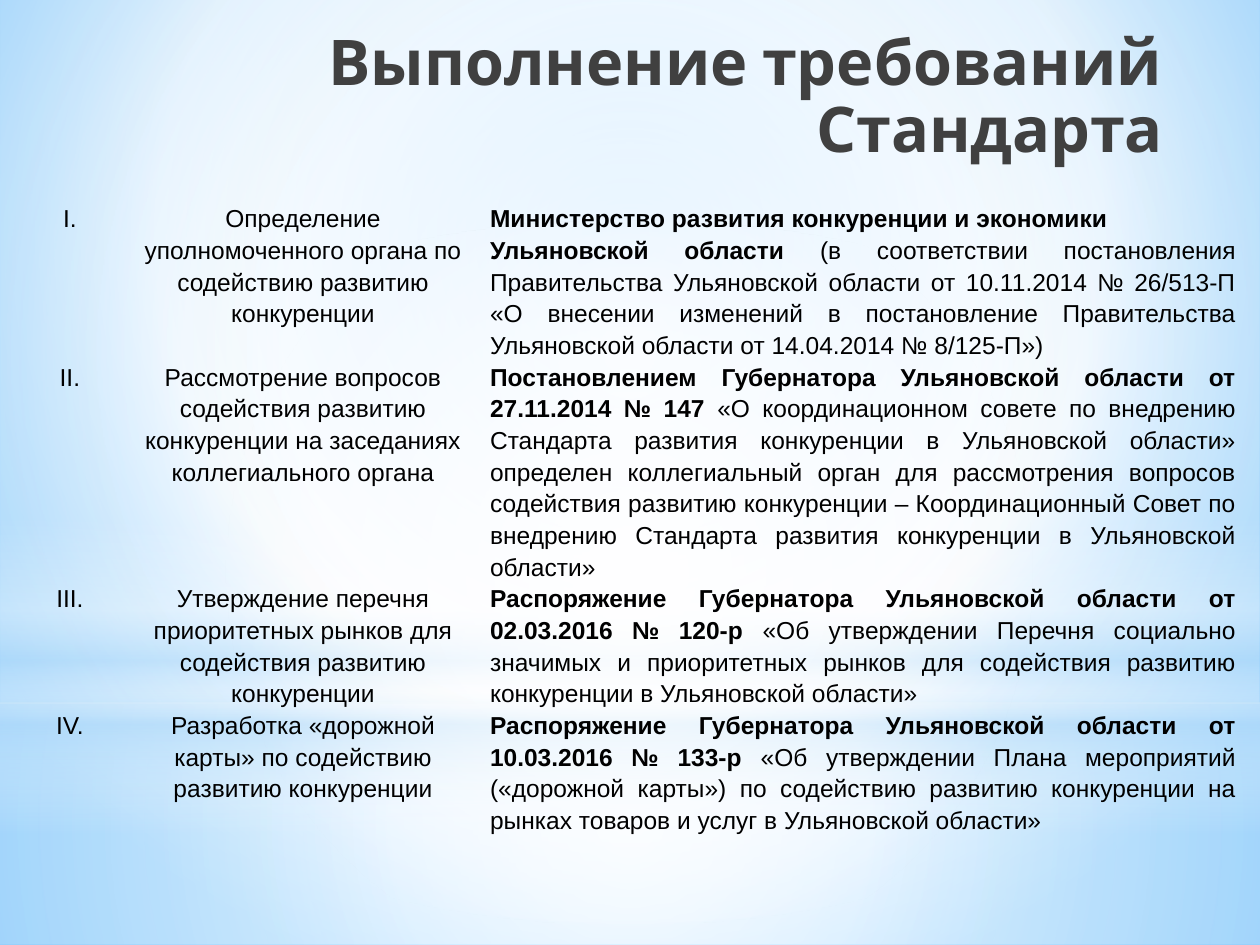
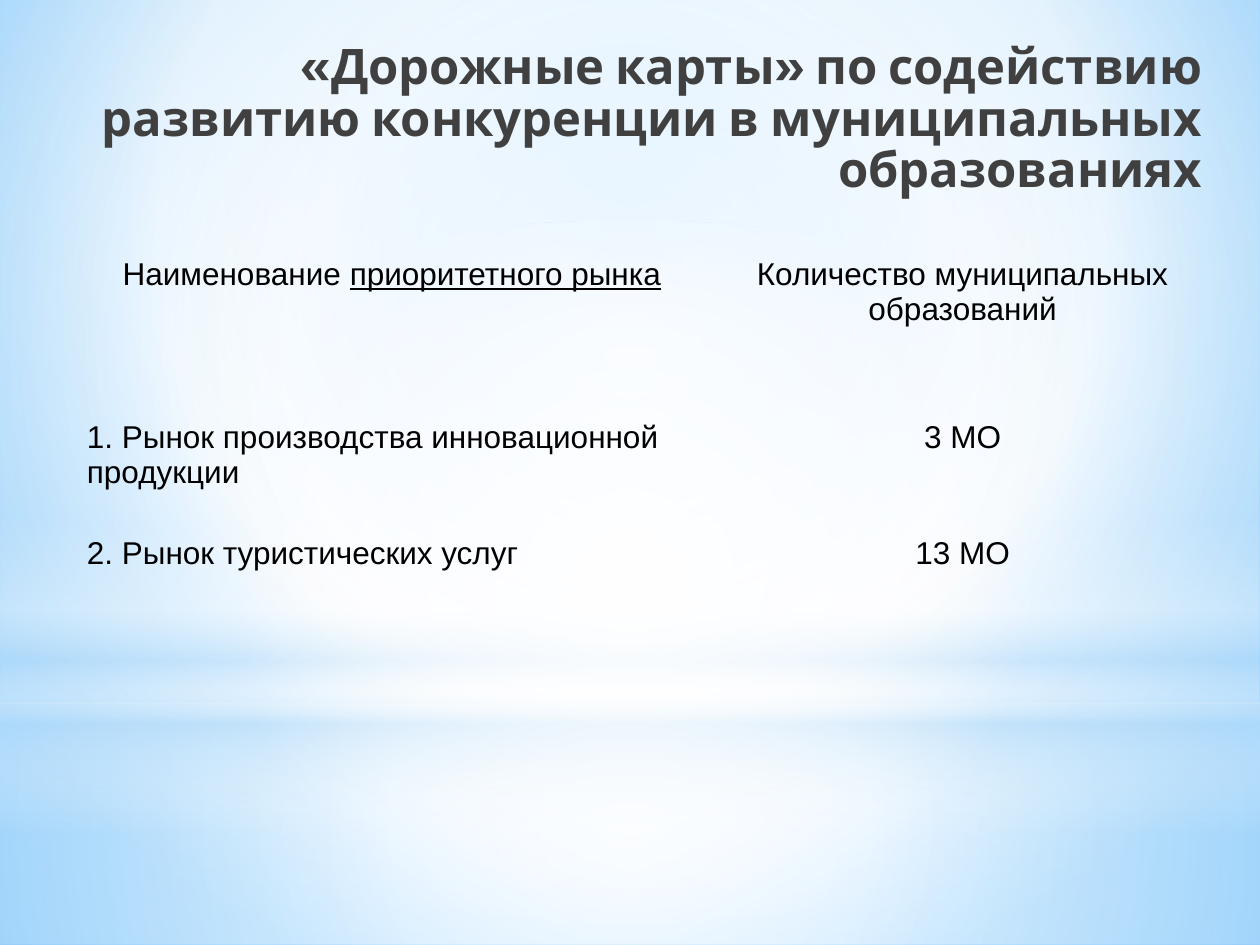
from dataclasses import dataclass

from lxml import etree
from pptx import Presentation
from pptx import util as u
from pptx.dml.color import RGBColor
from pptx.enum import shapes, text
from pptx.oxml.ns import qn


@dataclass(frozen=True)
class Theme:
    """Colours, fonts and type sizes shared by the slides."""
    title_font: str = "Cabin"
    body_font: str = "Arial"
    title_colour: str = "404040"
    body_colour: str = "000000"
    white: str = "FFFFFF"
    haze: str = "B4DCFA"
    sky: str = "9ED5FF"
    deep_sky: str = "5BB9FF"
    title_spacing: float = 0.88
    plain_table: str = "{2D5ABB26-0587-4C30-8999-92F81FD0307C}"


THEME = Theme()
CENTER = text.PP_ALIGN.CENTER
JUSTIFY = text.PP_ALIGN.JUSTIFY
LEFT = text.PP_ALIGN.LEFT
MIDDLE = (50, 50, 50, 50)

REQUIREMENTS = [
    ("I.", "Определение уполномоченного органа по содействию развитию конкуренции",
     [[("Министерство развития конкуренции и экономики", "bold")],
      [("Ульяновской области ", "bold"),
       ("(в соответствии постановления Правительства Ульяновской области от 10.11.2014 "
        "№ 26/513-П «О внесении изменений в постановление Правительства Ульяновской "
        "области от 14.04.2014 № 8/125-П»)", "")]]),
    ("II.", "Рассмотрение вопросов содействия развитию конкуренции на заседаниях "
            "коллегиального органа",
     [[("Постановлением Губернатора Ульяновской области от 27.11.2014 № 147 ", "bold"),
       ("«О координационном совете по внедрению Стандарта развития конкуренции в "
        "Ульяновской области» определен коллегиальный орган для рассмотрения вопросов "
        "содействия развитию конкуренции – Координационный Совет по внедрению Стандарта "
        "развития конкуренции в Ульяновской области»", "")]]),
    ("III.", "Утверждение перечня приоритетных рынков для содействия развитию конкуренции",
     [[("Распоряжение Губернатора Ульяновской области от 02.03.2016 № 120-р ", "bold"),
       ("«Об утверждении Перечня социально значимых и приоритетных рынков для содействия "
        "развитию конкуренции в Ульяновской области»", "")]]),
    ("IV.", "Разработка «дорожной карты» по содействию развитию конкуренции",
     [[("Распоряжение Губернатора Ульяновской области от 10.03.2016 № 133-р ", "bold"),
       ("«Об утверждении Плана мероприятий («дорожной карты») по содействию развитию "
        "конкуренции на рынках товаров и услуг в Ульяновской области»", "")]]),
]

MARKETS = [
    ([[("Наименование ", ""), ("приоритетного рынка", "underline")]],
     "Количество муниципальных образований"),
    ("1. Рынок производства инновационной продукции", "3 МО"),
    ("2. Рынок туристических услуг", "13 МО"),
]


def inches(box):
    """Turn a tuple of numbers into lengths."""
    return [u.Inches(value) for value in box]


def set_gradient(fill, holder, stops, centre=None):
    """Give a fill its stops, radial around centre or running downwards."""
    fill.gradient()
    gradient = next(holder.iter(qn("a:gradFill")))
    for child in list(gradient):
        gradient.remove(child)
    stop_list = etree.SubElement(gradient, qn("a:gsLst"))
    for position, colour, opacity in stops:
        stop = etree.SubElement(stop_list, qn("a:gs"), pos=str(position * 1000))
        tint = etree.SubElement(stop, qn("a:srgbClr"), val=colour)
        if opacity < 100:
            etree.SubElement(tint, qn("a:alpha"), val=str(opacity * 1000))
    if centre is None:
        etree.SubElement(gradient, qn("a:lin"), ang="5400000", scaled="0")
        return
    circle = etree.SubElement(gradient, qn("a:path"), path="circle")
    edges = {side: str(value * 1000) for side, value in zip("ltrb", centre)}
    etree.SubElement(circle, qn("a:fillToRect"), **edges)


def build_backdrop(master, page):
    """Draw the sky and its glows and hand them to the slide master."""
    white, haze = THEME.white, THEME.haze
    set_gradient(master.background.fill, master.element,
                 [(0, THEME.sky, 100), (60, white, 100), (100, THEME.deep_sky, 100)],
                 (20, 10, 20, 60))
    rectangle, oval = shapes.MSO_SHAPE.RECTANGLE, shapes.MSO_SHAPE.OVAL
    glows = [
        (rectangle, (0, 5.58, 10, 1.92),
         [(0, white, 91), (37, white, 76), (100, haze, 79)], MIDDLE),
        (rectangle, (0, 0, 10, 5.58),
         [(0, white, 89), (48, white, 62), (100, haze, 79)], MIDDLE),
        (rectangle, (0, 4.12, 10, 2.5),
         [(0, white, 0), (29, white, 30), (45, haze, 40), (55, white, 26),
          (65, haze, 60), (100, white, 0)], None),
        (oval, (0, 1.75, 10, 5.58), [(0, white, 100), (56, white, 0)], MIDDLE),
    ]
    tree = next(master.element.iter(qn("p:spTree")))
    for index, (kind, box, stops, centre) in enumerate(glows):
        glow = page.shapes.add_shape(kind, *inches(box))
        glow.shadow.inherit = False
        glow.line.fill.background()
        set_gradient(glow.fill, glow.element, stops, centre)
        tree.insert(2 + index, glow.element)


def set_title(page, wording, box, size):
    """Place and format the right-aligned title."""
    title = page.shapes.title
    title.left, title.top, title.width, title.height = inches(box)
    frame = title.text_frame
    frame.text = wording
    frame.word_wrap = True
    frame.auto_size = text.MSO_AUTO_SIZE.NONE
    frame.vertical_anchor = text.MSO_ANCHOR.TOP
    para = frame.paragraphs[0]
    para.alignment = text.PP_ALIGN.RIGHT
    para.line_spacing = THEME.title_spacing
    font = para.runs[0].font
    font.name, font.size, font.bold = THEME.title_font, u.Pt(size), True
    font.color.rgb = RGBColor.from_string(THEME.title_colour)


def fill_cell(cell, content, size, alignment, spacing):
    """Write plain wording or paragraphs of styled spans into a cell."""
    cell.fill.background()
    paragraphs = [[(content, "")]] if isinstance(content, str) else content
    frame = cell.text_frame
    for index, spans in enumerate(paragraphs):
        para = frame.add_paragraph() if index else frame.paragraphs[0]
        para.alignment = alignment
        para.line_spacing = spacing
        for wording, style in spans:
            span = para.add_run()
            span.text = wording
            font = span.font
            font.name, font.size = THEME.body_font, u.Pt(size)
            font.bold = style == "bold"
            font.underline = style == "underline"
            font.color.rgb = RGBColor.from_string(THEME.body_colour)


def add_plain_table(page, rows, box, widths, heights, size, alignments,
                    spacing=1.0, margins=(0.1, 0.05)):
    """Add an unruled table; alignments holds one list per row."""
    graphic = page.shapes.add_table(len(rows), len(widths), *inches(box))
    table = graphic.table
    table.first_row = table.horz_banding = False
    next(graphic.element.iter(qn("a:tableStyleId"))).text = THEME.plain_table
    for column, width in zip(table.columns, widths):
        column.width = u.Inches(width)
    side, edge = inches(margins)
    for row, height, contents, row_alignments in zip(table.rows, heights, rows, alignments):
        row.height = u.Inches(height)
        for cell, content, alignment in zip(row.cells, contents, row_alignments):
            cell.margin_left = cell.margin_right = side
            cell.margin_top = cell.margin_bottom = edge
            fill_cell(cell, content, size, alignment, spacing)


def build_requirements(page):
    """Build the slide on meeting the requirements of the Standard."""
    set_title(page, "Выполнение требований Стандарта", (0.51, 0.21, 8.82, 1.25), 36)
    add_plain_table(page, REQUIREMENTS, (0.12, 1.6, 9.76, 3.84),
                    (0.87, 2.83, 6.06), (0.9, 1.1, 0.75, 1.09), 14,
                    [(CENTER, CENTER, JUSTIFY)] * len(REQUIREMENTS), 1.15, (0.07, 0))


def build_markets(page):
    """Build the slide on municipal road maps by market."""
    set_title(page, "«Дорожные карты» по содействию развитию конкуренции в "
                    "муниципальных образованиях", (0.43, 0.29, 9.21, 1.25), 28)
    add_plain_table(page, MARKETS, (0.59, 1.99, 9.06, 2.62),
                    (5.04, 4.02), (1.29, 0.92, 0.41), 18,
                    [(CENTER, CENTER), (LEFT, CENTER), (LEFT, CENTER)])


def main():
    """Build the deck and save it."""
    deck = Presentation()
    deck.slide_width, deck.slide_height = u.Inches(10), u.Inches(7.5)
    title_only = deck.slide_layouts[5]
    pages = [deck.slides.add_slide(title_only) for _ in range(2)]
    build_backdrop(deck.slide_master, pages[0])
    build_requirements(pages[0])
    build_markets(pages[1])
    deck.save("out.pptx")


if __name__ == "__main__":
    main()
